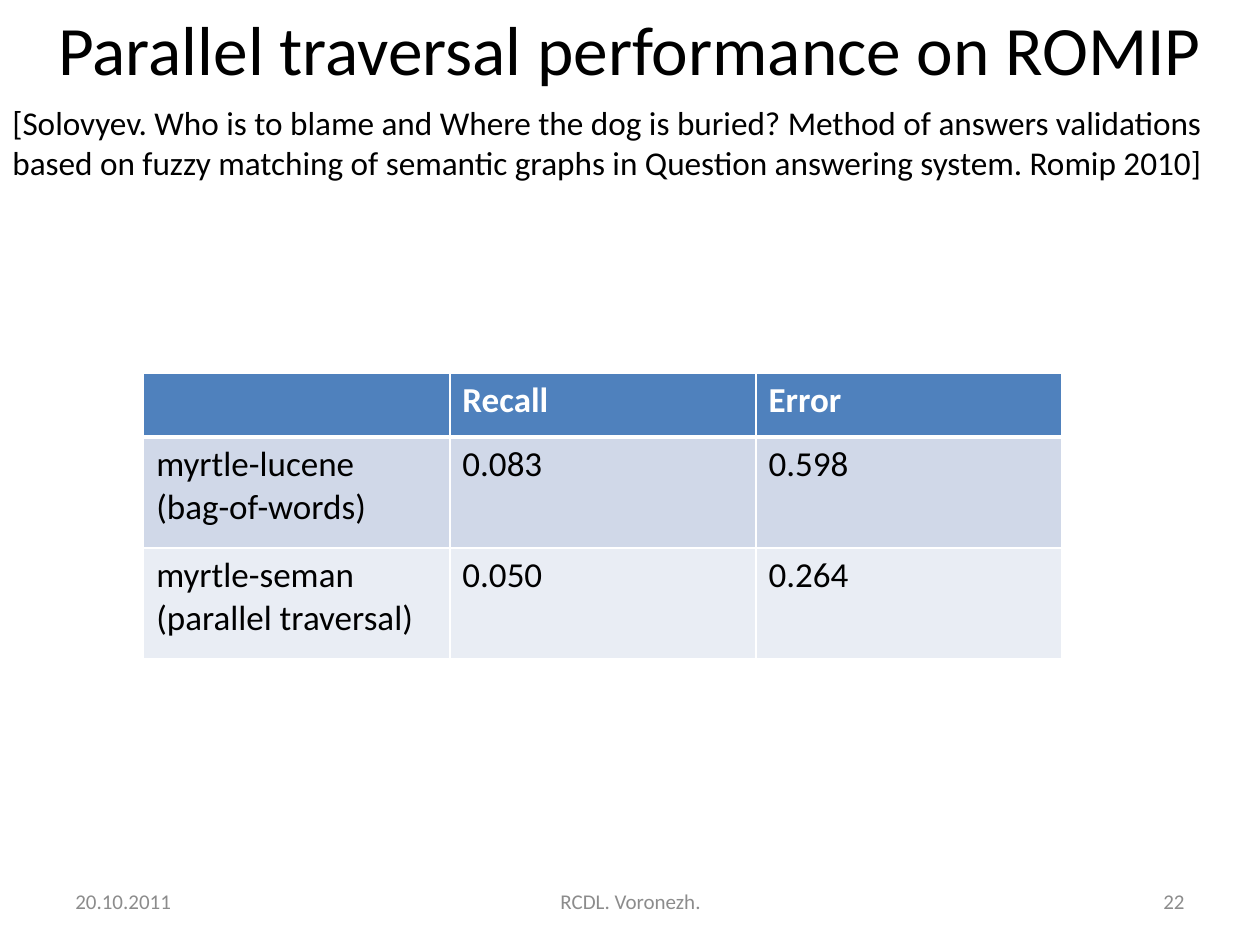
from dataclasses import dataclass

from lxml import etree
from pptx import Presentation
from pptx.dml.color import RGBColor
from pptx.enum import text as t
from pptx.oxml import ns
from pptx.util import Inches, Pt

FONT = "Calibri"
BLACK, WHITE, GRAY = "000000", "FFFFFF", "8C8C8C"
ROW_FILLS = ["4F81BD", "D0D8E8", "E9EDF4"]
ROW_HEIGHTS = [0.51, 0.88, 0.88]
COLUMN_WIDTH = 2.43
RESULTS = [
    ["", "Recall", "Error"],
    ["myrtle-lucene\n(bag-of-words)", "0.083", "0.598"],
    ["myrtle-seman\n(parallel traversal)", "0.050", "0.264"],
]


@dataclass
class Label:
    text: str
    left: float
    top: float
    width: float
    height: float
    size: float
    color: str = BLACK
    align: t.PP_ALIGN = t.PP_ALIGN.LEFT
    anchor: t.MSO_ANCHOR = t.MSO_ANCHOR.MIDDLE


def footer(text: str, left: float, width: float, align: t.PP_ALIGN) -> Label:
    return Label(text, left, 6.95, width, 0.4, 12, GRAY, align)


LABELS = [
    Label("Parallel traversal performance on ROMIP", 0, 0, 10, 0.76, 39.6,
          align=t.PP_ALIGN.CENTER),
    Label("[Solovyev. Who is to blame and Where the dog is buried? Method of answers "
          "validations based on fuzzy matching of semantic graphs in Question answering "
          "system. Romip 2010]", 0, 0.76, 10, 0.74, 19, anchor=t.MSO_ANCHOR.TOP),
    footer("20.10.2011", 0.5, 2.33, t.PP_ALIGN.LEFT),
    footer("22", 7.17, 2.33, t.PP_ALIGN.RIGHT),
    footer("RCDL. Voronezh.", 3.42, 3.17, t.PP_ALIGN.CENTER),
]


def rgb(color: str) -> RGBColor:
    return RGBColor.from_string(color)


def write(paragraph, content: str, size: float, color: str, bold: bool = False) -> None:
    paragraph.text = content
    for run in paragraph.runs:
        run.font.name = FONT
        run.font.size = Pt(size)
        run.font.bold = bold
        run.font.color.rgb = rgb(color)


def add_label(slide, label: Label) -> None:
    shape = slide.shapes.add_textbox(Inches(label.left), Inches(label.top),
                                     Inches(label.width), Inches(label.height))
    frame = shape.text_frame
    frame.word_wrap = True
    frame.vertical_anchor = label.anchor
    paragraph = frame.paragraphs[0]
    write(paragraph, label.text, label.size, label.color)
    paragraph.alignment = label.align


def add_border(cell, side: str, width: float) -> None:
    properties = cell._tc.get_or_add_tcPr()
    line = etree.SubElement(properties, ns.qn(f"a:ln{side}"), w=str(Pt(width)))
    fill = etree.SubElement(line, ns.qn("a:solidFill"))
    etree.SubElement(fill, ns.qn("a:srgbClr"), val=WHITE)


def add_results(slide) -> None:
    columns = len(RESULTS[0])
    table = slide.shapes.add_table(len(RESULTS), columns, Inches(1.14), Inches(2.96),
                                   Inches(COLUMN_WIDTH * columns),
                                   Inches(sum(ROW_HEIGHTS))).table
    for column in table.columns:
        column.width = Inches(COLUMN_WIDTH)
    for row, values in enumerate(RESULTS):
        table.rows[row].height = Inches(ROW_HEIGHTS[row])
        header = row == 0
        widths = {"L": 1, "R": 1, "T": 3 if row == 1 else 1, "B": 3 if header else 1}
        for column, value in enumerate(values):
            cell = table.cell(row, column)
            for side, width in widths.items():
                add_border(cell, side, width)
            cell.fill.solid()
            cell.fill.fore_color.rgb = rgb(ROW_FILLS[row])
            write(cell.text_frame.paragraphs[0], value, 20,
                  WHITE if header else BLACK, header)


def main() -> None:
    presentation = Presentation()
    presentation.slide_width = Inches(10)
    presentation.slide_height = Inches(7.5)
    slide = presentation.slides.add_slide(presentation.slide_layouts[6])
    for label in LABELS:
        add_label(slide, label)
    add_results(slide)
    presentation.save("out.pptx")


if __name__ == "__main__":
    main()
